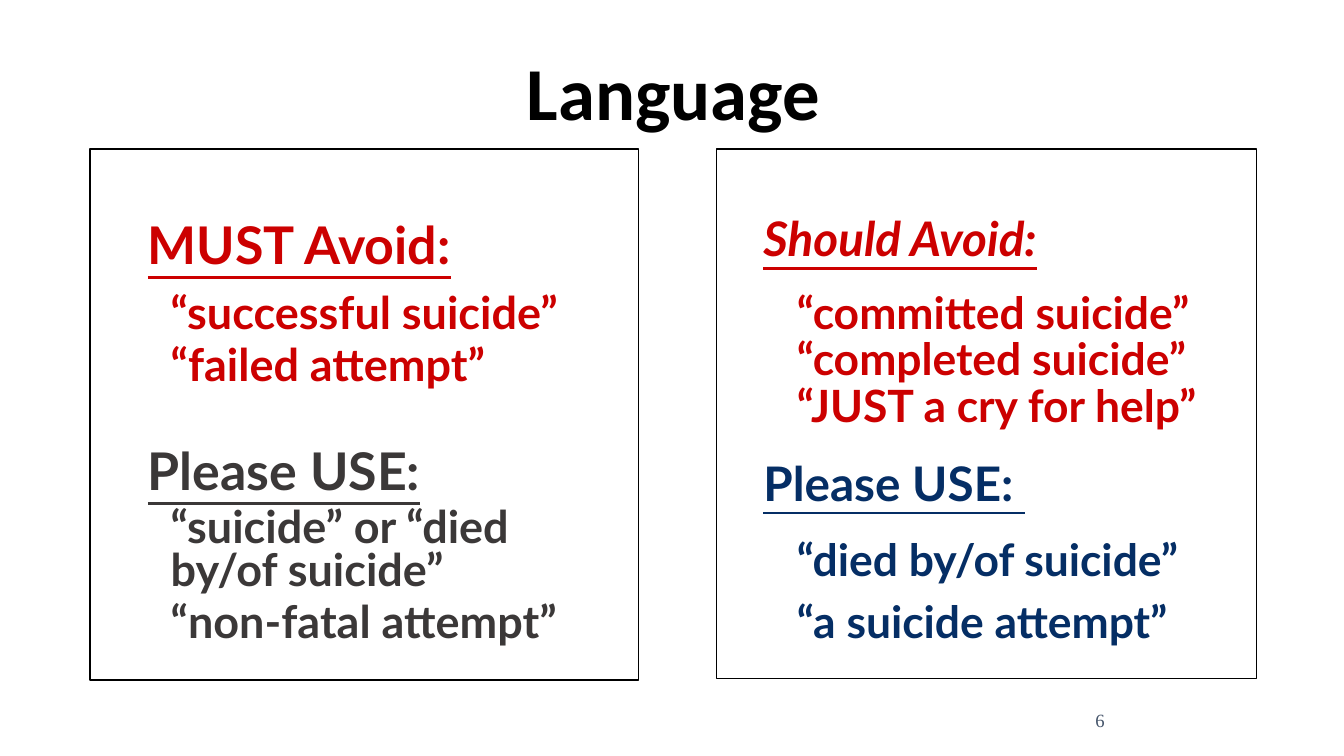
from pptx import Presentation
from pptx.dml.color import RGBColor
from pptx.enum import text
from pptx.oxml import parse_xml
from pptx.oxml.ns import nsdecls
from pptx.util import Inches, Pt

THEME = {
    "title_font": "Calibri", "body_font": "Lato", "number_font": "Times New Roman",
    "title_size": 40, "number_size": 10,
    "black": "000000", "white": "FFFFFF", "red": "CC0000",
    "gray": "3B3838", "navy": "052E65", "slate": "44546A",
}

TITLE = "Language"
PAGE_NUMBER = "6"

# Each line: text, points of space before, line spacing
PANELS = [
    {
        "area": (0.67, 1.11, 4.08, 3.95), "top_inset": 0.56,
        "heading_indent": 0.33, "heading_size": 27.8, "item_size": 24.1,
        "groups": [
            {"color": "red", "italic": False, "heading": ("MUST Avoid:", 0, 0.8),
             "items": [("“successful suicide”", 11, 0.8),
                       ("“failed attempt”", 5, 0.8)]},
            {"color": "gray", "italic": False, "heading": ("Please USE:", 32, 0.8),
             "items": [("“suicide” or “died\vby/of suicide”", 4.8, 0.8),
                       ("“non-fatal attempt”", 4.8, 0.8)]},
        ],
    },
    {
        "area": (5.33, 1.11, 4.02, 3.94), "top_inset": 0.56,
        "heading_indent": 0.25, "heading_size": 25.5, "item_size": 23.8,
        "groups": [
            {"color": "red", "italic": True, "heading": ("Should Avoid:", 0, 0.7),
             "items": [("“committed suicide”", 19, 0.7),
                       ("“completed suicide”", 4.8, 0.7),
                       ("“JUST a cry for help”", 4.8, 0.7)]},
            {"color": "navy", "italic": False, "heading": ("Please USE: ", 21, 0.7),
             "items": [("“died by/of suicide”", 12.4, 1.0),
                       ("“a suicide attempt”", 4.8, 1.0)]},
        ],
    },
]
ITEM_INDENT = 0.5


def color(name):
    return RGBColor.from_string(THEME[name])


def place(box, area):
    box.left, box.top, box.width, box.height = map(Inches, area)


def style(para, font, size, color_name, bold=False, italic=False, underline=False):
    for span in para.runs:
        span.font.name = THEME[font]
        span.font.size = Pt(size)
        span.font.color.rgb = color(color_name)
        span.font.bold = bold
        span.font.italic = italic
        span.font.underline = underline


def fill_line(para, line, indent):
    """Write one unbulleted line with its spacing and left indent."""
    para.text, before, spacing = line
    para.space_before = Pt(before)
    para.line_spacing = spacing
    props = para._p.get_or_add_pPr()
    props.set("marL", str(Inches(indent)))
    props.set("indent", "0")
    props.append(parse_xml(f"<a:buNone {nsdecls('a')}/>"))


def fill_panel(box, panel):
    place(box, panel["area"])
    box.fill.solid()
    box.fill.fore_color.rgb = color("white")
    box.line.color.rgb = color("black")
    box.line.width = Pt(0.75)
    frame = box.text_frame
    frame.auto_size = text.MSO_AUTO_SIZE.NONE
    frame.vertical_anchor = text.MSO_ANCHOR.TOP
    frame.margin_top = Inches(panel["top_inset"])
    para = frame.paragraphs[0]
    for group in panel["groups"]:
        if group is not panel["groups"][0]:
            para = frame.add_paragraph()
        fill_line(para, group["heading"], panel["heading_indent"])
        style(para, "body_font", panel["heading_size"], group["color"],
              bold=True, italic=group["italic"], underline=True)
        for item in group["items"]:
            para = frame.add_paragraph()
            fill_line(para, item, ITEM_INDENT)
            style(para, "body_font", panel["item_size"], group["color"], bold=True)


def fill_centered(box, words, **look):
    frame = box.text_frame
    frame.text = words
    frame.word_wrap = True
    frame.auto_size = text.MSO_AUTO_SIZE.NONE
    frame.vertical_anchor = text.MSO_ANCHOR.MIDDLE
    para = frame.paragraphs[0]
    para.alignment = text.PP_ALIGN.CENTER
    style(para, **look)
    return para


def main():
    deck = Presentation()
    deck.slide_width = Inches(10)
    deck.slide_height = deck.slide_width * 9 // 16
    page = deck.slides.add_slide(deck.slide_layouts.get_by_name("Two Content"))

    title, *bodies = page.placeholders
    place(title, (0.67, 0.31, 8.68, 0.81))
    para = fill_centered(title, TITLE, font="title_font", size=THEME["title_size"],
                         color_name="black", bold=True)
    para.line_spacing = 0.9

    for box, panel in zip(bodies, PANELS):
        fill_panel(box, panel)

    number = page.shapes.add_textbox(*map(Inches, (7.06, 5.21, 2.25, 0.3)))
    fill_centered(number, PAGE_NUMBER, font="number_font",
                  size=THEME["number_size"], color_name="slate")

    deck.save("out.pptx")


if __name__ == "__main__":
    main()
